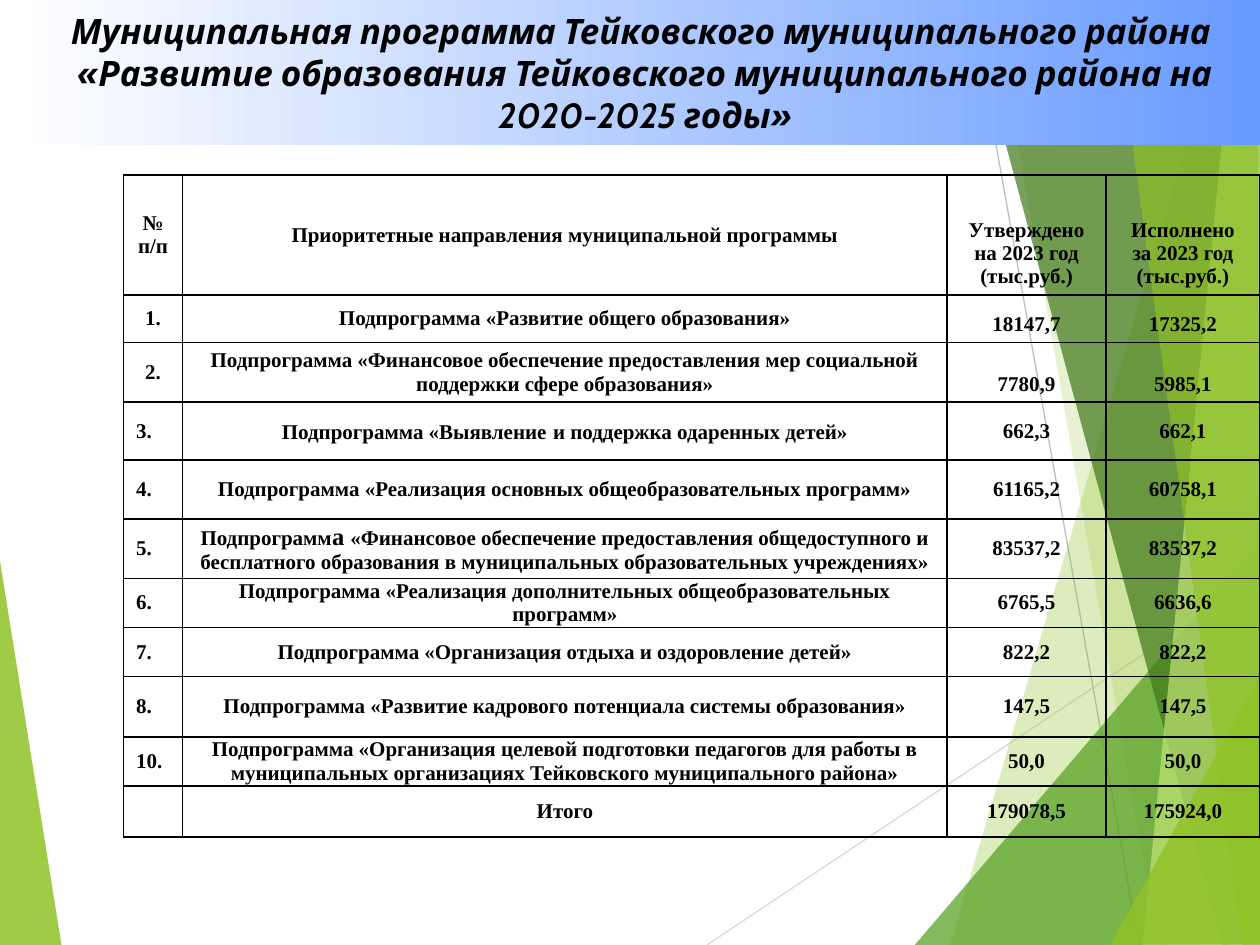
from lxml.etree import SubElement
from pptx import Presentation
from pptx.dml.color import RGBColor
from pptx.enum.shapes import MSO_CONNECTOR, MSO_SHAPE
from pptx.enum.text import MSO_ANCHOR, PP_ALIGN
from pptx.oxml.ns import qn
from pptx.util import Inches, Pt

GREEN = "90C226"
RAYS = [
    ([(9.75, 0), (7.54, 7.5), (10.02, 7.51), (10.01, 0.01)], GREEN, 30),
    ([(7.88, -0.01), (9.19, 7.5), (10.01, 7.5), (10.01, -0.01)], GREEN, 20),
    ([(7.26, 7.5), (10, 4.29), (10.01, 7.5)], "54A021", 72),
    ([(7.67, -0.01), (9.7, 7.5), (10.01, 7.49), (10.01, -0.01)], "3F7819", 70),
    ([(9.81, -0.01), (9.07, 7.5), (10.01, 7.5), (10, -0.01)], "C0E474", 70),
    ([(8.83, -0.01), (9.86, 7.5), (10, 7.5), (9.98, -0.01)], GREEN, 65),
    ([(8.81, 7.5), (10.01, 5.35), (10.01, 7.49)], GREEN, 80),
]
LEFT_RAY = ([(-0.01, 4.39), (0.49, 7.51), (-0.01, 7.5)], GREEN, 85)
BEAMS = [((5.61, 7.5), (10.01, 4.57), "D9D9D9"), ((7.7, 0), (9.04, 7.5), "BFBFBF")]

TITLE = [
    "Муниципальная программа Тейковского муниципального района ",
    "«Развитие образования Тейковского муниципального района на 2020-2025 годы»",
]
COLS = [0.47, 6.06, 1.26, 1.22]
ROWS = [0.95, 0.38, 0.47, 0.46, 0.47, 0.47, 0.39, 0.39, 0.48, 0.39, 0.39]
HEADER = (
    "№\nп/п", "Приоритетные направления муниципальной программы",
    "Утверждено\nна 2023 год\n(тыс.руб.)", "Исполнено\nза 2023 год\n(тыс.руб.)",
)
PROGRAMS = [
    ("1.", "Подпрограмма «Развитие общего образования»", "18147,7", "17325,2"),
    ("2.", "Подпрограмма «Финансовое обеспечение предоставления мер социальной "
     "поддержки сфере образования»", "7780,9", "5985,1"),
    ("3.", ["Подпрограмма «Выявление", (" ", 14), "и поддержка одаренных детей»"],
     "662,3", "662,1"),
    ("4.", "Подпрограмма «Реализация основных общеобразовательных программ»",
     "61165,2", "60758,1"),
    ("5.", ["Подпрограмм", ("а ", 14), "«Финансовое обеспечение предоставления общедоступного и "
            "бесплатного образования в муниципальных образовательных учреждениях»"],
     "83537,2", "83537,2"),
    ("6.", "Подпрограмма «Реализация дополнительных общеобразовательных программ»",
     "6765,5", "6636,6"),
    ("7.", "Подпрограмма «Организация отдыха и оздоровление детей»", "822,2", "822,2"),
    ("8.", "Подпрограмма «Развитие кадрового потенциала системы образования»",
     "147,5", "147,5"),
    ("10.", "Подпрограмма «Организация целевой подготовки педагогов для работы в "
     "муниципальных организациях Тейковского муниципального района»", "50,0", "50,0"),
    ("", "Итого", "179078,5", "175924,0"),
]


def rgb(color):
    """Turn a hex string into a colour."""
    return RGBColor.from_string(color)


def write(tf, paragraphs, size=12, font="Times New Roman", color="000000",
          italic=False, align=PP_ALIGN.CENTER):
    """Write paragraphs, each a string or a list of strings and (text, size) pairs."""
    for i, runs in enumerate(paragraphs):
        p = tf.add_paragraph() if i else tf.paragraphs[0]
        p.alignment = align
        for part in [runs] if isinstance(runs, str) else runs:
            text, run_size = (part, size) if isinstance(part, str) else part
            r = p.add_run()
            r.text = text
            r.font.size, r.font.name = Pt(run_size), font
            r.font.bold, r.font.italic = True, italic
            r.font.color.rgb = rgb(color)


def add_ray(s, x, y, points, color, alpha):
    """Draw one translucent polygon."""
    pts = [(Inches(x + px), Inches(y + py)) for px, py in points]
    builder = s.shapes.build_freeform(*pts[0])
    builder.add_line_segments(pts[1:], close=True)
    sp = builder.convert_to_shape()
    sp.shadow.inherit = False
    sp.fill.solid()
    sp.fill.fore_color.rgb = rgb(color)
    sp.line.fill.background()
    clr = sp._element.spPr.find(qn("a:solidFill"))[0]
    SubElement(clr, qn("a:alpha"), val=str(alpha * 1000))


def add_beam(s, x, y, start, end, color):
    """Draw one thin line."""
    ends = [Inches(v) for v in (x + start[0], y + start[1], x + end[0], y + end[1])]
    line = s.shapes.add_connector(MSO_CONNECTOR.STRAIGHT, *ends)
    line.line.color.rgb = rgb(color)
    line.line.width = Pt(0.75)
    SubElement(line._element.spPr, qn("a:effectLst"))


def add_backdrop(s, x, y):
    """Draw the green rays and thin lines behind the content."""
    add_ray(s, x, y, *LEFT_RAY)
    for beam in BEAMS:
        add_beam(s, x, y, *beam)
    for ray in RAYS:
        add_ray(s, x, y, *ray)


def style_cell(cell):
    """Give a cell thin black borders and no fill."""
    tcPr = cell._tc.get_or_add_tcPr()
    for side in ("lnL", "lnR", "lnT", "lnB"):
        ln = SubElement(tcPr, qn(f"a:{side}"), w=str(Pt(1)))
        SubElement(SubElement(ln, qn("a:solidFill")), qn("a:srgbClr"), val="000000")
    cell.fill.background()


def add_program_table(s, x, y, w, h):
    """Place the table of subprograms with planned and spent sums."""
    table = s.shapes.add_table(len(ROWS), len(COLS), Inches(x), Inches(y),
                               Inches(w), Inches(h)).table
    table.first_row = table.horz_banding = False
    for col, width in zip(table.columns, COLS):
        col.width = Inches(width * w / sum(COLS))
    for row, height in zip(table.rows, ROWS):
        row.height = Inches(height * h / sum(ROWS))
    for i, values in enumerate([HEADER] + PROGRAMS):
        for j, value in enumerate(values):
            cell = table.cell(i, j)
            style_cell(cell)
            tight = i > 2 and j > 0
            cell.margin_left = cell.margin_right = Inches(0.08 if tight else 0.1)
            cell.margin_top = cell.margin_bottom = Inches(0 if tight else 0.05)
            low = i < 3 and j > 1
            cell.vertical_anchor = MSO_ANCHOR.BOTTOM if low else MSO_ANCHOR.MIDDLE
            align = PP_ALIGN.LEFT if i > 2 and j == 0 else PP_ALIGN.CENTER
            if value:
                paragraphs = value.split("\n") if isinstance(value, str) else [value]
                write(cell.text_frame, paragraphs, align=align)


def add_title(s, x, y, w, h):
    """Place the title on its gradient band."""
    sp = s.shapes.add_shape(MSO_SHAPE.RECTANGLE, Inches(x), Inches(y), Inches(w), Inches(h))
    sp.shadow.inherit = False
    sp.line.fill.background()
    sp.fill.gradient()
    sp.fill.gradient_angle = 0
    for stop, color, place in zip(sp.fill.gradient_stops, ("FFFFFF", "6699FF"), (0, 1)):
        stop.color.rgb = rgb(color)
        stop.position = place
    tf = sp.text_frame
    tf.word_wrap = True
    tf.vertical_anchor = MSO_ANCHOR.MIDDLE
    write(tf, TITLE, size=20, font="Cabin", italic=True)


def main():
    """Build and save the slide."""
    prs = Presentation()
    prs.slide_width, prs.slide_height = Inches(10), Inches(7.5)
    s = prs.slides.add_slide(prs.slide_layouts[6])
    add_backdrop(s, 0, 0)
    add_program_table(s, 0.98, 1.39, 9.02, 5.24)
    add_title(s, 0.12, 0, 10, 1.15)
    prs.save("out.pptx")


if __name__ == "__main__":
    main()
